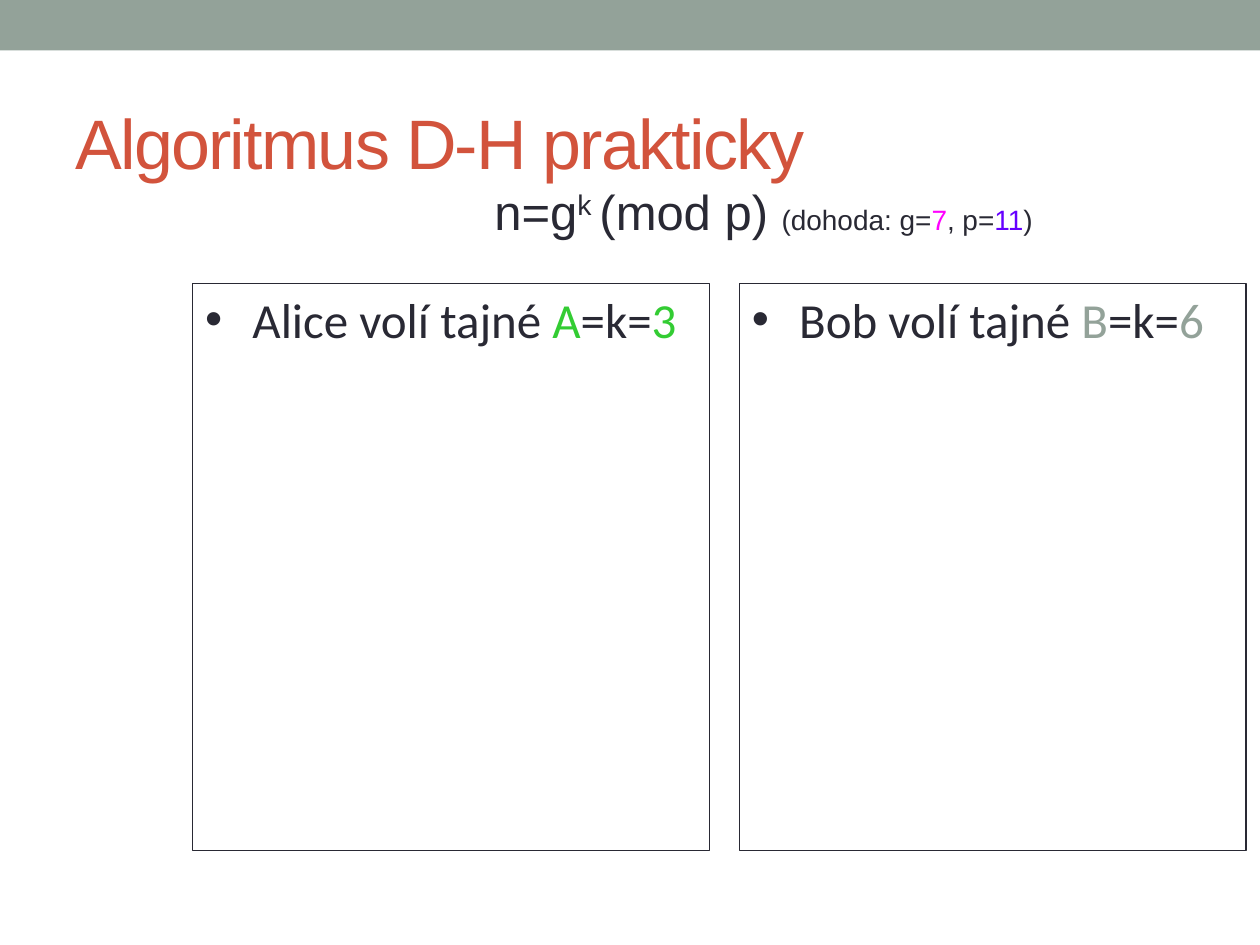
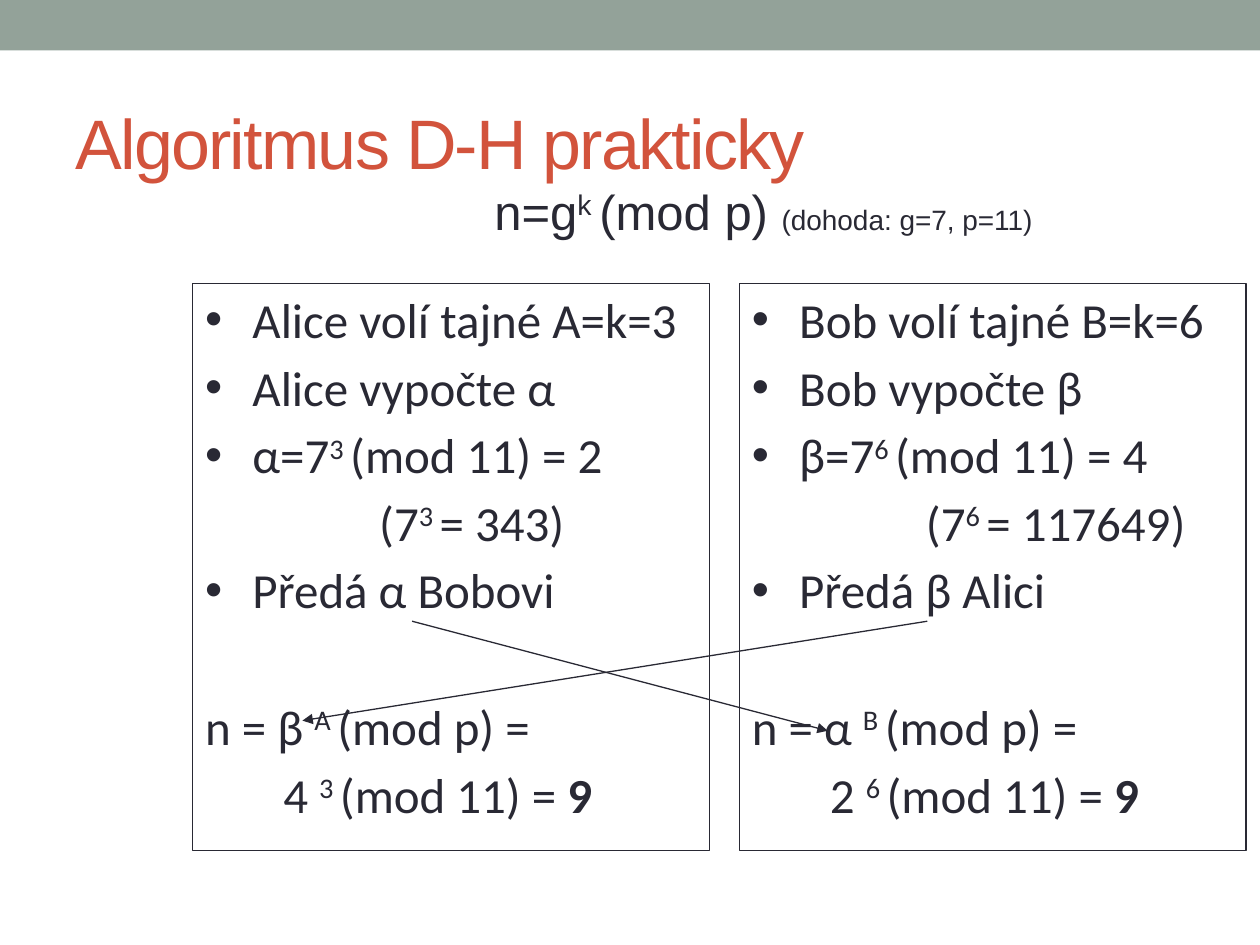
from collections import namedtuple

from lxml.etree import SubElement
from pptx import Presentation
from pptx.dml.color import RGBColor
from pptx.enum.shapes import MSO_CONNECTOR, MSO_SHAPE
from pptx.enum.text import MSO_ANCHOR, PP_ALIGN
from pptx.oxml.ns import qn
from pptx.util import Pt

COLORS = {
    "band": "93A299", "title": "D2533C", "ink": "292934",
    "alice": "33CC33", "bob": "93A299", "base": "FF00FF", "modulus": "6600FF",
}
HEADING_FONT, BODY_FONT = "Arial", "Calibri"
BODY_SIZE, NOTE_SIZE = 28, 16
HANG = 27          # hanging indent of bulleted steps
STEP_GAP = 5       # space above each step
REPLY_GAP = 44.5   # space above the final computation

Box = namedtuple("Box", "left top width height")
Run = namedtuple("Run", "text color size raised bold",
                 defaults=("ink", BODY_SIZE, False, False))
Step = namedtuple("Step", "runs bullet indent gap", defaults=(True, 0, STEP_GAP))
Party = namedtuple("Party", "name letter secret public power result peer "
                            "peer_public peer_result color")

SLIDE = Box(0, 0, 720, 540)
BAND = Box(0, 0, SLIDE.width, 28.8)
TITLE = Box(36, 41.75, 648, 77.75)
FORMULA = Box(172.8, 100.1, 527, 59)
ALICE_BOX = Box(110.2, 162, 295.2, 324)
BOB_BOX = Box(422.6, 162, 289.4, 324)

ALICE = Party("Alice", "A", 3, "α", 343, 2, "Bobovi", "β", 4, "alice")
BOB = Party("Bob", "B", 6, "β", 117649, 4, "Alici", "α", 2, "bob")


def rgb(name):
    return RGBColor.from_string(COLORS[name])


def write_runs(paragraph, runs, font_name):
    for part in runs:
        run = paragraph.add_run()
        run.text = part.text
        run.font.name, run.font.size = font_name, Pt(part.size)
        run.font.color.rgb = rgb(part.color)
        if part.bold:
            run.font.bold = True
        if part.raised:
            run.font._element.set("baseline", "30000")


def add_text_frame(slide, box):
    frame = slide.shapes.add_textbox(*map(Pt, box)).text_frame
    frame.word_wrap = True
    return frame


def add_rectangle(slide, box):
    rectangle = slide.shapes.add_shape(MSO_SHAPE.RECTANGLE, *map(Pt, box))
    rectangle.shadow.inherit = False
    return rectangle


def add_header(slide, band_box, title_box):
    # Top band
    band = add_rectangle(slide, band_box)
    band.fill.solid()
    band.fill.fore_color.rgb = rgb("band")
    band.line.fill.background()

    # Title
    title = add_text_frame(slide, title_box)
    title.vertical_anchor = MSO_ANCHOR.MIDDLE
    title.text = "Algoritmus D-H prakticky"
    font = title.paragraphs[0].runs[0].font
    font.name, font.size = HEADING_FONT, Pt(40)
    font.color.rgb = rgb("title")
    font._element.set("spc", "-100")


def add_formula(slide, box, agreement):
    formula = add_text_frame(slide, box).paragraphs[0]
    formula.alignment = PP_ALIGN.CENTER
    formula.space_before = Pt(STEP_GAP)
    rule = [Run("n=g"), Run("k ", raised=True), Run("(mod p) ")]
    write_runs(formula, rule + agreement, HEADING_FONT)


def add_party(slide, box, steps):
    panel = add_rectangle(slide, box)
    panel.fill.background()
    panel.line.color.rgb = rgb("ink")
    panel.line.width = Pt(0.75)
    frame = panel.text_frame
    frame.word_wrap = True
    frame.vertical_anchor = MSO_ANCHOR.TOP
    for index, step in enumerate(steps):
        paragraph = frame.add_paragraph() if index else frame.paragraphs[0]
        paragraph.alignment = PP_ALIGN.LEFT
        paragraph.space_before = Pt(step.gap)
        properties = paragraph._p.get_or_add_pPr()
        properties.set("marL", str(Pt(HANG if step.bullet else step.indent)))
        properties.set("indent", str(Pt(-HANG if step.bullet else 0)))
        if step.bullet:
            SubElement(properties, qn("a:buFont")).set("typeface", "Arial")
            SubElement(properties, qn("a:buChar")).set("char", "•")
        else:
            SubElement(properties, qn("a:buNone"))
        write_runs(paragraph, step.runs, BODY_FONT)


def choice_step(party, color):
    return Step([Run(f"{party.name} volí tajné "), Run(party.letter, color),
                 Run("=k="), Run(str(party.secret), color)])


def exchange_steps(party):
    exponent = Run(f"{party.secret} ", raised=True)
    return [
        choice_step(party, "ink"),
        Step([Run(f"{party.name} vypočte {party.public}")]),
        Step([Run(f"{party.public}=7"), exponent,
              Run(f"(mod 11) = {party.result}")]),
        Step([Run("(7"), exponent, Run(f"= {party.power})")], False, 99.4),
        Step([Run(f"Předá {party.public} {party.peer}")]),
        Step([Run(f"n = {party.peer_public} "),
              Run(f"{party.letter} ", raised=True), Run("(mod p) =")],
             False, 0, REPLY_GAP),
        Step([Run(f"{party.peer_result} "), exponent, Run("(mod 11) = "),
              Run("9", bold=True)], False, 44.6),
    ]


def add_handover(slide, sender, start, receiver, end):
    arrow = slide.shapes.add_connector(
        MSO_CONNECTOR.STRAIGHT,
        Pt(sender.left + start[0]), Pt(sender.top + start[1]),
        Pt(receiver.left + end[0]), Pt(receiver.top + end[1]))
    arrow.line.color.rgb = rgb("ink")
    arrow.line.width = Pt(0.75)
    SubElement(arrow.line._get_or_add_ln(), qn("a:tailEnd")).set("type", "triangle")
    SubElement(arrow._element.spPr, qn("a:effectLst"))


def add_algorithm_slide(deck, agreement, alice_steps, bob_steps):
    slide = deck.slides.add_slide(deck.slide_layouts[6])
    add_header(slide, BAND, TITLE)
    add_formula(slide, FORMULA, agreement)
    add_party(slide, ALICE_BOX, alice_steps)
    add_party(slide, BOB_BOX, bob_steps)
    return slide


def main():
    deck = Presentation()
    deck.slide_width, deck.slide_height = Pt(SLIDE.width), Pt(SLIDE.height)

    # Choice of the secrets
    agreement = [Run(text, color, NOTE_SIZE) for text, color in (
        ("(dohoda: g=", "ink"), ("7", "base"), (", p=", "ink"),
        ("11", "modulus"), (")", "ink"))]
    add_algorithm_slide(deck, agreement, [choice_step(ALICE, ALICE.color)],
                        [choice_step(BOB, BOB.color)])

    # Whole exchange
    agreement = [Run("(dohoda: g=7, p=11)", size=NOTE_SIZE)]
    exchange = add_algorithm_slide(deck, agreement, exchange_steps(ALICE),
                                   exchange_steps(BOB))
    add_handover(exchange, BOB_BOX, (107.3, 193), ALICE_BOX, (62.6, 249.8))
    add_handover(exchange, ALICE_BOX, (125.3, 193), BOB_BOX, (50.4, 255.6))

    deck.save("out.pptx")


if __name__ == "__main__":
    main()
